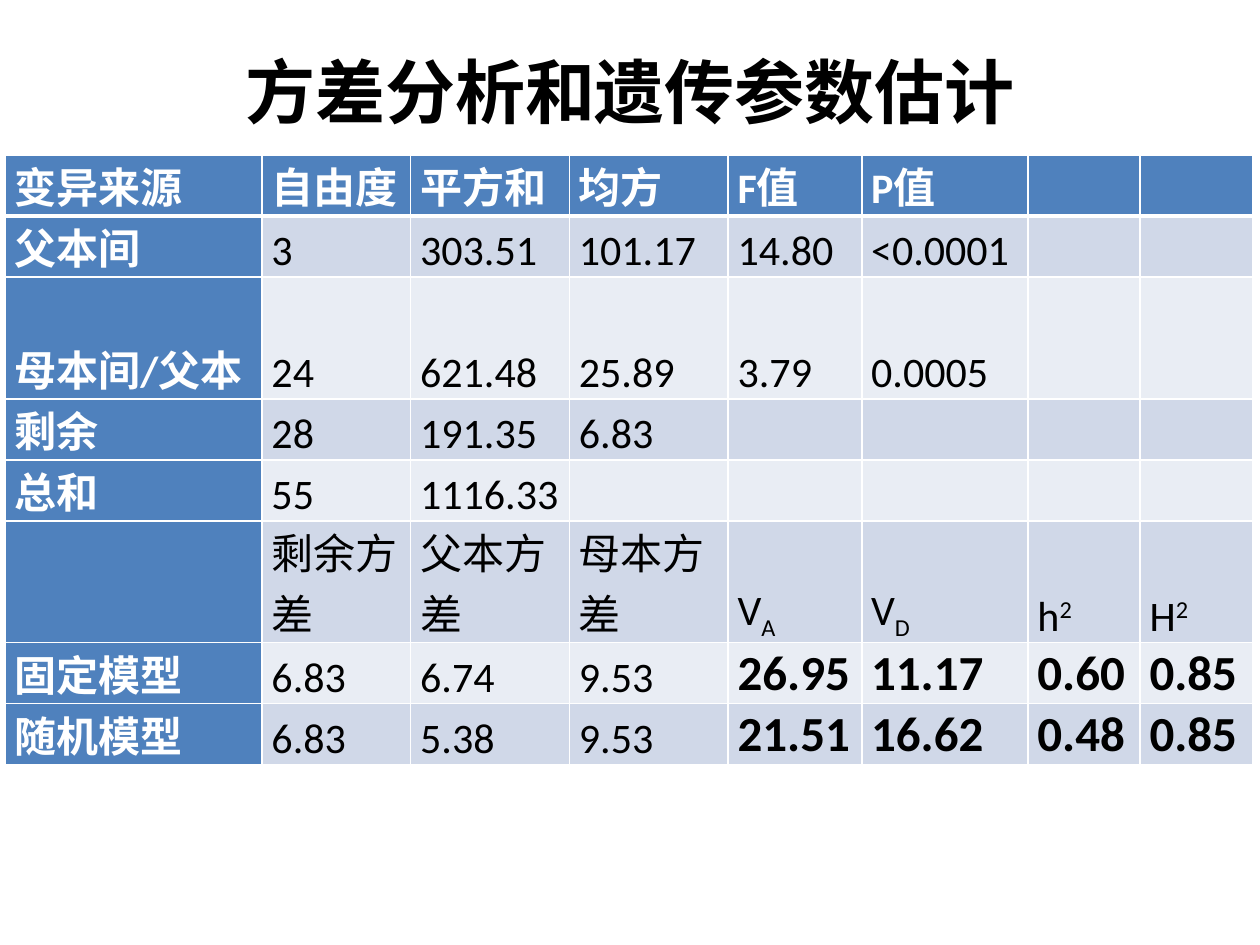
import pptx
import pptx.dml.color
import pptx.enum.lang
import pptx.enum.text
import pptx.oxml
import pptx.oxml.ns
import pptx.util
from lxml import etree

RGBColor = pptx.dml.color.RGBColor
Inches = pptx.util.Inches
ALIGN = pptx.enum.text.PP_ALIGN
ANCHOR = pptx.enum.text.MSO_ANCHOR
CHINESE = pptx.enum.lang.MSO_LANGUAGE_ID.SIMPLIFIED_CHINESE

BLACK = RGBColor(0x00, 0x00, 0x00)
WHITE = RGBColor(0xFF, 0xFF, 0xFF)
HEADING_BLUE = RGBColor(0x4F, 0x81, 0xBD)
BANDS = (RGBColor(0xE9, 0xED, 0xF4), RGBColor(0xD0, 0xD8, 0xE8))

SLIDE_WIDTH, SLIDE_HEIGHT = 10, 7.5
COLUMN_WIDTHS = (2.04, 1.18, 1.26, 1.26, 1.06, 1.32, 0.89, 0.89)
TABLE_HEIGHT = 4.84
LINES_PER_ROW = (1, 1, 2, 1, 1, 2, 1, 1)
SUB, SUPER = -25, 30

# A cell is a string, or a list of (text, baseline shift in percent).
ANOVA = [
    ["变异来源", "自由度", "平方和", "均方", "F值", "P值", "", ""],
    ["父本间", "3", "303.51", "101.17", "14.80", "<0.0001", "", ""],
    ["母本间/父本", "24", "621.48", "25.89", "3.79", "0.0005", "", ""],
    ["剩余", "28", "191.35", "6.83", "", "", "", ""],
    ["总和", "55", "1116.33", "", "", "", "", ""],
    ["", "剩余方差", "父本方差", "母本方差",
     [("V", 0), ("A", SUB)], [("V", 0), ("D", SUB)],
     [("h", 0), ("2", SUPER)], [("H", 0), ("2", SUPER)]],
    ["固定模型", "6.83", "6.74", "9.53", "26.95", "11.17", "0.60", "0.85"],
    ["随机模型", "6.83", "5.38", "9.53", "21.51", "16.62", "0.48", "0.85"],
]
FIRST_MODEL_ROW, FIRST_ESTIMATE_COLUMN = 6, 4


def write(frame, content, *, size=24, font="Calibri", color=BLACK, bold=False,
          align=ALIGN.LEFT):
    paragraph = frame.paragraphs[0]
    paragraph.alignment = align
    pieces = [(content, 0)] if isinstance(content, str) else content
    for text, baseline in pieces:
        if not text:
            continue
        run = paragraph.add_run()
        run.text = text
        run.font.size = pptx.util.Pt(size)
        run.font.name = font
        run.font.bold = bold
        run.font.color.rgb = color
        run.font.language_id = CHINESE
        if baseline:
            run.font._element.set("baseline", str(baseline * 1000))


def add_borders(cell, top=1, bottom=1):
    """Draw white cell borders; widths are in points."""
    properties = cell._tc.get_or_add_tcPr()
    qn = pptx.oxml.ns.qn
    for side, width in (("L", 1), ("R", 1), ("T", top), ("B", bottom)):
        line = etree.SubElement(properties, qn(f"a:ln{side}"),
                                w=str(pptx.util.Pt(width)))
        fill = etree.SubElement(line, qn("a:solidFill"))
        etree.SubElement(fill, qn("a:srgbClr"), val=str(WHITE))


def add_title(slide, text):
    title = slide.shapes.add_textbox(
        Inches(0.05 * SLIDE_WIDTH), Inches(0.36),
        Inches(0.9 * SLIDE_WIDTH), Inches(0.71))
    frame = title.text_frame
    frame.word_wrap = True
    frame.vertical_anchor = ANCHOR.MIDDLE
    write(frame, text, size=40, font="Times New Roman", bold=True,
          align=ALIGN.CENTER)


def fill_cell(cell, content, row, column):
    heading = row == 0 or column == 0
    estimate = row >= FIRST_MODEL_ROW and column >= FIRST_ESTIMATE_COLUMN
    cell.vertical_anchor = ANCHOR.BOTTOM
    cell.margin_left = cell.margin_right = pptx.util.Pt(5.4)
    cell.margin_top = cell.margin_bottom = 0
    add_borders(cell, top=3 if row == 1 else 1, bottom=3 if row == 0 else 1)
    cell.fill.solid()
    cell.fill.fore_color.rgb = HEADING_BLUE if heading else BANDS[row % 2]
    write(cell.text_frame, content,
          size=28 if estimate else 24,
          color=WHITE if heading else BLACK,
          bold=heading or estimate,
          align=ALIGN.JUSTIFY if row == 0 else ALIGN.LEFT)


def add_anova_table(slide, rows):
    table = slide.shapes.add_table(
        len(rows), len(COLUMN_WIDTHS), Inches(0.04), Inches(1.23),
        Inches(sum(COLUMN_WIDTHS)), Inches(TABLE_HEIGHT)).table
    table.first_col = True
    line_height = TABLE_HEIGHT / sum(LINES_PER_ROW)
    for column, width in zip(table.columns, COLUMN_WIDTHS):
        column.width = Inches(width)
    for r, contents in enumerate(rows):
        table.rows[r].height = Inches(line_height * LINES_PER_ROW[r])
        for c, content in enumerate(contents):
            fill_cell(table.cell(r, c), content, r, c)


def main():
    presentation = pptx.Presentation()
    presentation.slide_width = Inches(SLIDE_WIDTH)
    presentation.slide_height = Inches(SLIDE_HEIGHT)
    slide = presentation.slides.add_slide(presentation.slide_layouts[6])
    add_title(slide, "方差分析和遗传参数估计")
    add_anova_table(slide, ANOVA)
    presentation.save("out.pptx")


if __name__ == "__main__":
    main()
